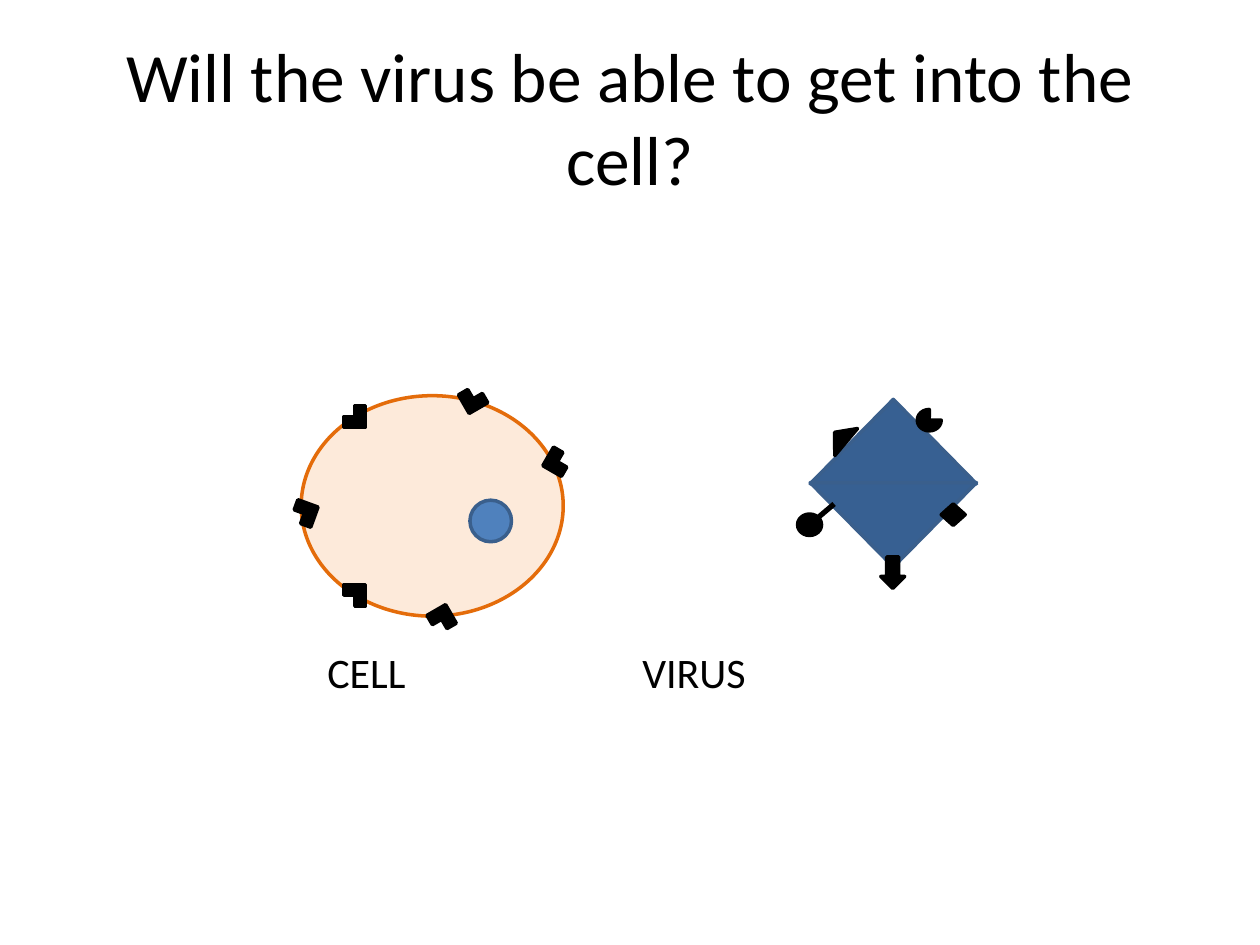
from typing import NamedTuple

from lxml import etree
from pptx import Presentation
from pptx.dml.color import RGBColor
from pptx.enum.shapes import MSO_CONNECTOR, MSO_SHAPE
from pptx.enum.text import MSO_ANCHOR, PP_ALIGN
from pptx.oxml.ns import qn
from pptx.util import Inches, Pt

OVAL = MSO_SHAPE.OVAL
CORNER = MSO_SHAPE.CORNER
WEDGE = MSO_SHAPE.ISOSCELES_TRIANGLE
ARROW = MSO_SHAPE.DOWN_ARROW
DIAMOND = MSO_SHAPE.DIAMOND
PIE = MSO_SHAPE.PIE
STRAIGHT = MSO_CONNECTOR.STRAIGHT
MIDDLE, TOP = MSO_ANCHOR.MIDDLE, MSO_ANCHOR.TOP
CENTER, LEFT = PP_ALIGN.CENTER, PP_ALIGN.LEFT

FONT = "Calibri"
COLORS = {
    "black": "000000",
    "cell": "FDEADA",
    "skin": "E46C0A",
    "core": "4F81BD",
    "edge": "3A5F8C",
    "virus": "376092",
}


class Part(NamedTuple):
    """A preset shape with its place in inches and its colours."""

    kind: MSO_SHAPE
    left: float
    top: float
    width: float
    height: float
    turn: float = 0
    fill: str = "black"
    line: str = "black"


class Label(NamedTuple):
    """A text with its place in inches and its layout."""

    text: str
    left: float
    top: float
    width: float
    height: float
    size: float
    align: PP_ALIGN
    anchor: MSO_ANCHOR


SPOTS = [
    (2.73, 3.22, 270),
    (3.67, 3.08, 330),
    (3.42, 4.83, 150),
    (2.73, 4.64, 180),
    (4.34, 3.58, 30),
    (2.33, 3.99, 200),
]
CELL = [
    Part(OVAL, 2.39, 3.14, 2.08, 1.75, fill="cell", line="skin"),
    Part(OVAL, 3.73, 3.97, 0.33, 0.33, fill="core", line="edge"),
    *(Part(CORNER, x, y, 0.17, 0.17, turn) for x, y, turn in SPOTS),
]
VIRUS = [
    *(Part(WEDGE, 6.43, y, 1.32, 0.67, turn, "virus", "edge") for y, turn in ((3.17, 0), (3.83, 180))),
    Part(OVAL, 6.33, 4.08, 0.19, 0.17),
    Part(ARROW, 6.99, 4.42, 0.19, 0.25),
    Part(DIAMOND, 7.47, 4, 0.19, 0.17),
    Part(PIE, 7.28, 3.25, 0.19, 0.17),
    Part(WEDGE, 6.53, 3.41, 0.28, 0.12, 310),
]
LABELS = [
    Label("Will the virus be able to get into the cell?", 0.5, 0.3, 9, 1.25, 39.6, CENTER, MIDDLE),
    Label("CELL\t\t\t\tVIRUS", 2.5, 5.08, 6.17, 0.5, 24, LEFT, TOP),
]


def tint(name: str) -> RGBColor:
    """Return the named colour."""
    return RGBColor.from_string(COLORS[name])


def draw_part(group, part: Part) -> None:
    """Draw one preset shape in a group."""
    box = map(Inches, (part.left, part.top, part.width, part.height))
    shape = group.shapes.add_shape(part.kind, *box)
    shape.rotation = part.turn
    shape.shadow.inherit = False
    shape.fill.solid()
    shape.fill.fore_color.rgb = tint(part.fill)
    shape.line.color.rgb = tint(part.line)
    shape.line.width = Pt(2)


def draw_stem(group, start: tuple[float, float], end: tuple[float, float]) -> None:
    """Draw the stem of the round spike."""
    stem = group.shapes.add_connector(STRAIGHT, *map(Inches, start + end))
    stem.line.color.rgb = tint("black")
    stem.line.width = Pt(3)
    etree.SubElement(stem._element.spPr, qn("a:effectLst"))


def draw_label(slide, label: Label) -> None:
    """Draw one text box."""
    box = map(Inches, (label.left, label.top, label.width, label.height))
    frame = slide.shapes.add_textbox(*box).text_frame
    frame.word_wrap = True
    frame.vertical_anchor = label.anchor
    frame.text = label.text
    line = frame.paragraphs[0]
    line.alignment = label.align
    for run in line.runs:
        run.font.name = FONT
        run.font.size = Pt(label.size)
        run.font.color.rgb = tint("black")


def main() -> None:
    """Build the slide and save it."""
    deck = Presentation()
    deck.slide_width, deck.slide_height = Inches(10), Inches(7.5)
    slide = deck.slides.add_slide(deck.slide_layouts[6])
    for label in LABELS:
        draw_label(slide, label)
    cell = slide.shapes.add_group_shape()
    for part in CELL:
        draw_part(cell, part)
    virus = slide.shapes.add_group_shape()
    for part in VIRUS:
        draw_part(virus, part)
    draw_stem(virus, (6.62, 4), (6.49, 4.11))
    deck.save("out.pptx")


if __name__ == "__main__":
    main()
